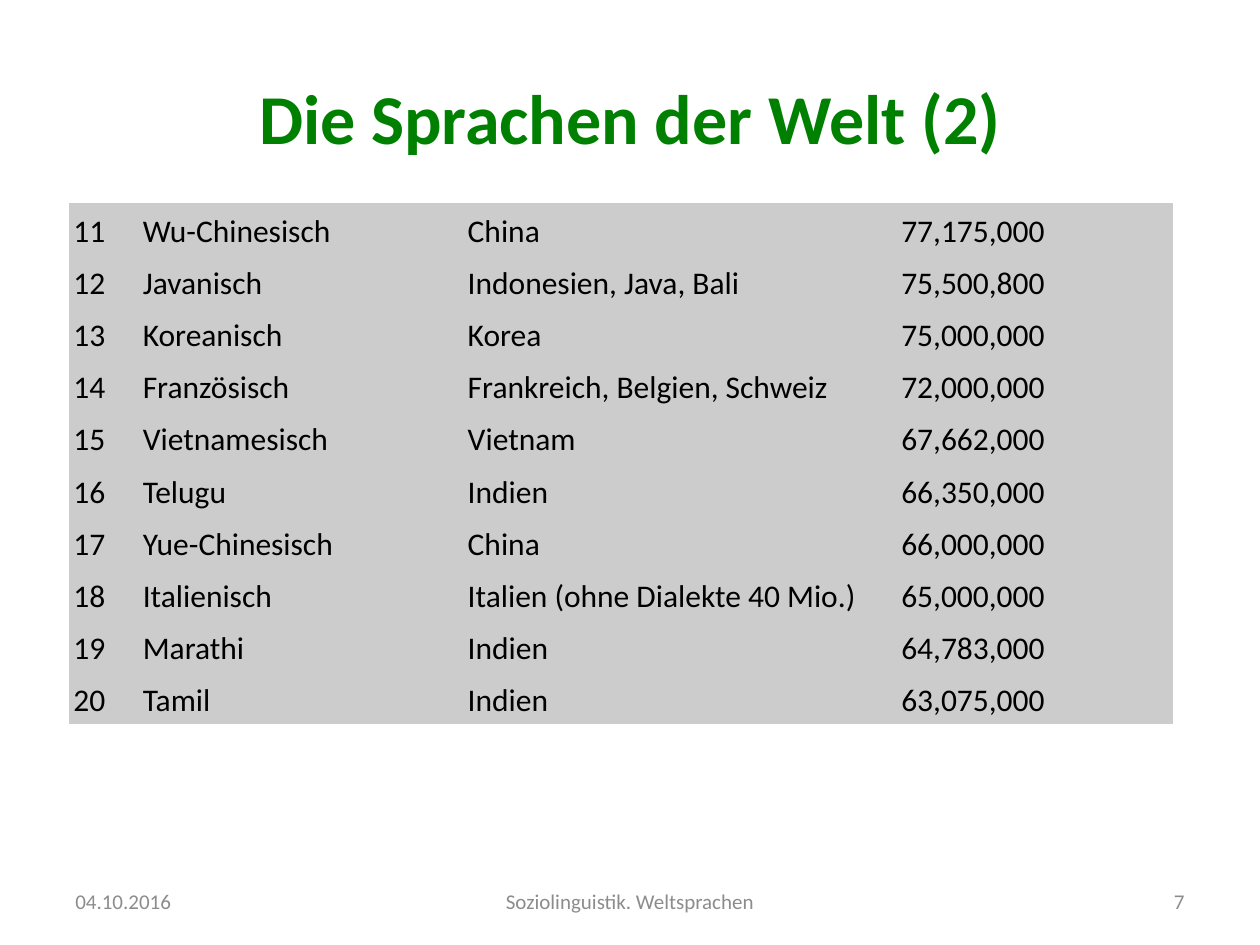
from pptx import Presentation
from pptx.dml.color import RGBColor
from pptx.enum.text import MSO_ANCHOR, PP_ALIGN
from pptx.util import Cm, Pt

LEFT, CENTER, RIGHT, JUSTIFY = PP_ALIGN.LEFT, PP_ALIGN.CENTER, PP_ALIGN.RIGHT, PP_ALIGN.JUSTIFY
MIDDLE = MSO_ANCHOR.MIDDLE

COLORS = {"title": "008000", "footer": "8C8C8C", "body": "000000", "cell": "CCCCCC"}
FONTS = {
    "title": {"name": "Calibri", "size": Pt(40), "bold": True},
    "footer": {"name": "Calibri", "size": Pt(12), "bold": False},
    "body": {"name": "Calibri", "size": Pt(18), "bold": False},
}
FRAME_FORMAT = {"word_wrap": True, "vertical_anchor": MIDDLE}
CELL_FORMAT = {f"margin_{side}": Cm(0.08) for side in ("left", "top", "right", "bottom")}


def set_all(target, values):
    for attribute, value in values.items():
        setattr(target, attribute, value)


def write(frame, text, role, **paragraph_format):
    paragraph = frame.paragraphs[0]
    set_all(paragraph, paragraph_format)
    run = paragraph.add_run()
    run.text = text
    set_all(run.font, FONTS[role])
    run.font.color.rgb = RGBColor.from_string(COLORS[role])


deck = Presentation()
deck.slide_width, deck.slide_height = Cm(25.4), Cm(19.05)
slide = deck.slides.add_slide(deck.slide_layouts[6])

# Title and footer line
captions = [
    ("Die Sprachen der Welt (2)", "title", CENTER, (1.27, 0.76, 22.86, 3.18)),
    ("04.10.2016", "footer", LEFT, (1.27, 17.65, 5.92, 1.02)),
    ("Soziolinguistik. Weltsprachen", "footer", CENTER, (8.68, 17.65, 8.04, 1.02)),
    ("7", "footer", RIGHT, (18.21, 17.65, 5.92, 1.02)),
]
for text, role, alignment, place in captions:
    caption = slide.shapes.add_textbox(*map(Cm, place))
    set_all(caption.text_frame, FRAME_FORMAT)
    write(caption.text_frame, text, role, alignment=alignment)

# Languages ranked 11 to 20: name, region, speakers
FIRST_RANK = 11
languages = [
    ("Wu-Chinesisch", "China", "77,175,000"),
    ("Javanisch", "Indonesien, Java, Bali", "75,500,800"),
    ("Koreanisch", "Korea", "75,000,000"),
    ("Französisch", "Frankreich, Belgien, Schweiz", "72,000,000"),
    ("Vietnamesisch", "Vietnam", "67,662,000"),
    ("Telugu", "Indien", "66,350,000"),
    ("Yue-Chinesisch", "China", "66,000,000"),
    ("Italienisch", "Italien (ohne Dialekte 40 Mio.)", "65,000,000"),
    ("Marathi", "Indien", "64,783,000"),
    ("Tamil", "Indien", "63,075,000"),
]
column_widths = [1.4, 6.55, 8.74, 5.56]
row_height = 1.05

ranking = slide.shapes.add_table(
    len(languages), len(column_widths), Cm(1.4), Cm(4.09),
    Cm(sum(column_widths)), Cm(row_height * len(languages)),
).table
set_all(ranking, {"first_row": False, "horz_banding": False})
for column, width in zip(ranking.columns, column_widths):
    column.width = Cm(width)

for rank, (row, language) in enumerate(zip(ranking.rows, languages), FIRST_RANK):
    row.height = Cm(row_height)
    for cell, text in zip(row.cells, (str(rank), *language)):
        set_all(cell, CELL_FORMAT)
        cell.fill.solid()
        cell.fill.fore_color.rgb = RGBColor.from_string(COLORS["cell"])
        write(cell.text_frame, text, "body", alignment=JUSTIFY, line_spacing=1.15)

# Clear the white grid lines of the default table style
ranking._tbl.tblPr.find("{*}tableStyleId").text = "{2D5ABB26-0587-4C30-8999-92F81FD0307C}"

deck.save("out.pptx")
